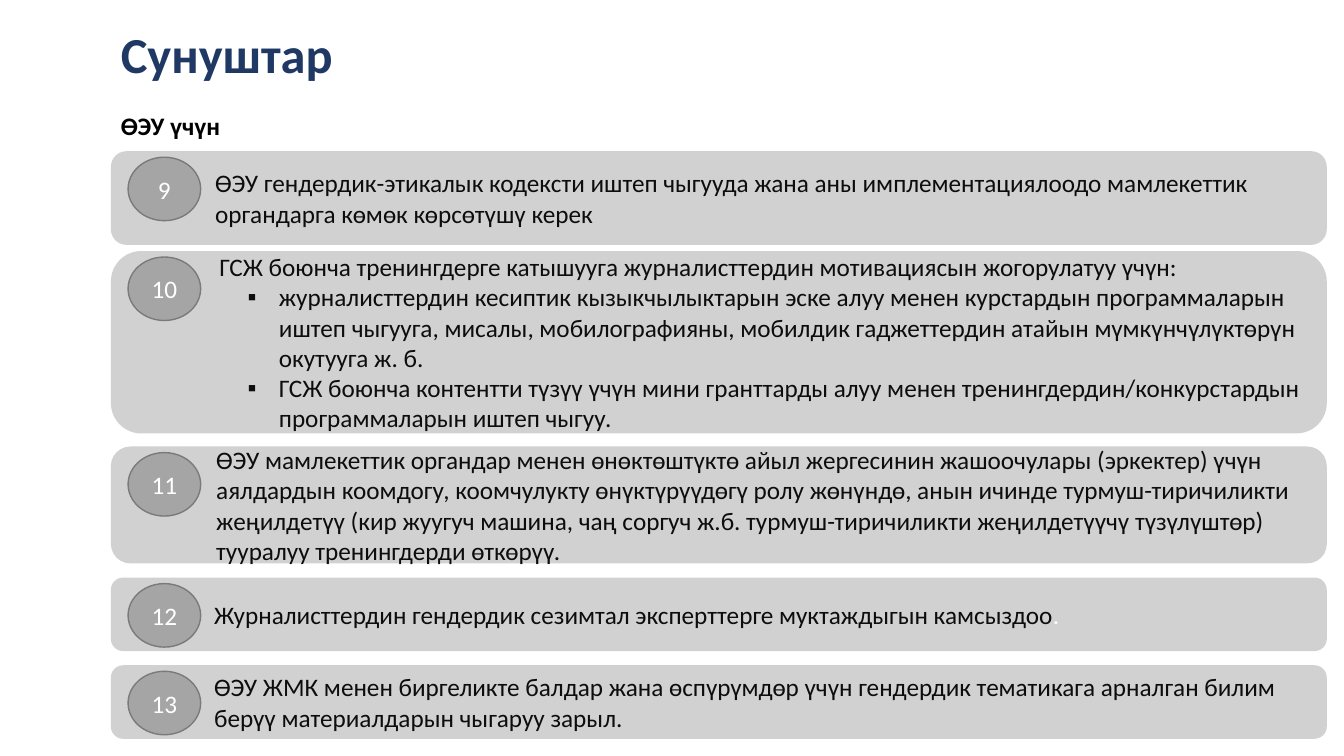
from dataclasses import dataclass

from lxml import etree
from pptx import Presentation
from pptx.dml.color import RGBColor
from pptx.enum.shapes import MSO_SHAPE as Preset
from pptx.enum.text import MSO_ANCHOR as Anchor, PP_ALIGN as Align
from pptx.oxml.ns import qn
from pptx.util import Inches, Pt

COLORS = {
    "title": "203864",
    "heading": "000000",
    "body": "0D0D0D",
    "gray": "A5A5A5",
    "outline": "7A7A7A",
    "white": "FFFFFF",
}
FONT = "Calibri"
CARD_LEFT, CARD_WIDTH = 1.1, 12.06
BADGE_LEFT, BADGE_WIDTH, BADGE_HEIGHT, BADGE_DROP = 1.27, 0.72, 0.63, 0.06
TEXT_INDENT, BULLET_INDENT, BULLET_HANG = 0.89, 1.48, -0.31


@dataclass(frozen=True)
class Recommendation:
    number: int
    top: float
    height: float
    text: str
    bullets: tuple[str, ...] = ()
    pale_ending: str = ""


RECOMMENDATIONS = [
    Recommendation(
        9, 1.5, 0.93,
        "ӨЭУ гендердик-этикалык кодексти иштеп чыгууда жана аны имплементациялоодо "
        "мамлекеттик органдарга көмөк көрсөтүшү керек",
    ),
    Recommendation(
        10, 2.49, 1.81,
        "ГСЖ боюнча тренингдерге катышууга журналисттердин мотивациясын жогорулатуу үчүн:",
        bullets=(
            "журналисттердин кесиптик кызыкчылыктарын эске алуу менен курстардын "
            "программаларын иштеп чыгууга, мисалы, мобилографияны, мобилдик "
            "гаджеттердин атайын мүмкүнчүлүктөрүн окутууга ж. б.",
            "ГСЖ боюнча контентти түзүү үчүн мини гранттарды алуу менен "
            "тренингдердин/конкурстардын программаларын иштеп чыгуу.",
        ),
    ),
    Recommendation(
        11, 4.43, 1.16,
        "ӨЭУ мамлекеттик органдар менен өнөктөштүктө айыл жергесинин жашоочулары "
        "(эркектер) үчүн аялдардын коомдогу, коомчулукту өнүктүрүүдөгү ролу жөнүндө, "
        "анын ичинде турмуш-тиричиликти жеңилдетүү (кир жуугуч машина, чаң соргуч ж.б. "
        "турмуш-тиричиликти жеңилдетүүчү түзүлүштөр) тууралуу тренингдерди өткөрүү.",
    ),
    Recommendation(
        12, 5.73, 0.73,
        "Журналисттердин гендердик сезимтал эксперттерге муктаждыгын камсыздоо",
        pale_ending=".",
    ),
    Recommendation(
        13, 6.6, 0.73,
        "ӨЭУ ЖМК менен биргеликте балдар жана өспүрүмдөр үчүн гендердик тематикага "
        "арналган билим берүү материалдарын чыгаруу зарыл.",
    ),
]


def color(name: str) -> RGBColor:
    return RGBColor.from_string(COLORS[name])


def write(paragraph, text: str, *, size: float = 18, ink: str = "body",
          bold: bool = False, align=Align.LEFT) -> None:
    """Append a formatted run to the paragraph."""
    paragraph.alignment = align
    run = paragraph.add_run()
    run.text = text
    run.font.name = FONT
    run.font.size = Pt(size)
    run.font.bold = bold
    run.font.color.rgb = color(ink)


def indent(paragraph, left: float, first: float = 0, bullet: str = "") -> None:
    properties = paragraph._p.get_or_add_pPr()
    properties.set("marL", str(Inches(left)))
    properties.set("indent", str(Inches(first)))
    if bullet:
        etree.SubElement(properties, qn("a:buFont")).set("typeface", "Arial")
        etree.SubElement(properties, qn("a:buChar")).set("char", bullet)


def add_label(slide, text: str, top: float, width: float, **text_format) -> None:
    box = slide.shapes.add_textbox(
        Inches(CARD_LEFT), Inches(top), Inches(width), Inches(0.71))
    box.text_frame.word_wrap = True
    write(box.text_frame.paragraphs[0], text, **text_format)


def add_gray_shape(group, preset, left: float, top: float, width: float, height: float):
    shape = group.shapes.add_shape(
        preset, Inches(left), Inches(top), Inches(width), Inches(height))
    shape.shadow.inherit = False
    shape.fill.solid()
    shape.fill.fore_color.rgb = color("gray")
    shape.text_frame.word_wrap = True
    shape.text_frame.vertical_anchor = Anchor.MIDDLE
    return shape


def add_recommendation(slide, item: Recommendation) -> None:
    group = slide.shapes.add_group_shape()
    card = add_gray_shape(
        group, Preset.ROUNDED_RECTANGLE, CARD_LEFT, item.top, CARD_WIDTH, item.height)
    card.line.fill.background()
    fill_color = card._element.spPr.find(qn("a:solidFill"))[0]
    etree.SubElement(fill_color, qn("a:alpha")).set("val", "50000")

    paragraph = card.text_frame.paragraphs[0]
    indent(paragraph, TEXT_INDENT)
    write(paragraph, item.text)
    if item.pale_ending:
        write(paragraph, item.pale_ending, ink="white")
    for bullet_text in item.bullets:
        paragraph = card.text_frame.add_paragraph()
        indent(paragraph, BULLET_INDENT, BULLET_HANG, "▪")
        write(paragraph, bullet_text)

    badge = add_gray_shape(
        group, Preset.OVAL, BADGE_LEFT, item.top + BADGE_DROP, BADGE_WIDTH, BADGE_HEIGHT)
    badge.line.color.rgb = color("outline")
    badge.line.width = Pt(1)
    write(badge.text_frame.paragraphs[0], str(item.number), ink="white", align=Align.CENTER)


def main() -> None:
    presentation = Presentation()
    presentation.slide_width = Inches(13.33)
    presentation.slide_height = Inches(7.5)
    slide = presentation.slides.add_slide(presentation.slide_layouts[6])

    add_label(slide, "Сунуштар", 0.18, 9.67, size=36, ink="title", bold=True)
    add_label(slide, "ӨЭУ үчүн", 1.04, 7.73, ink="heading", bold=True)
    for item in RECOMMENDATIONS:
        add_recommendation(slide, item)

    presentation.save("out.pptx")


if __name__ == "__main__":
    main()
